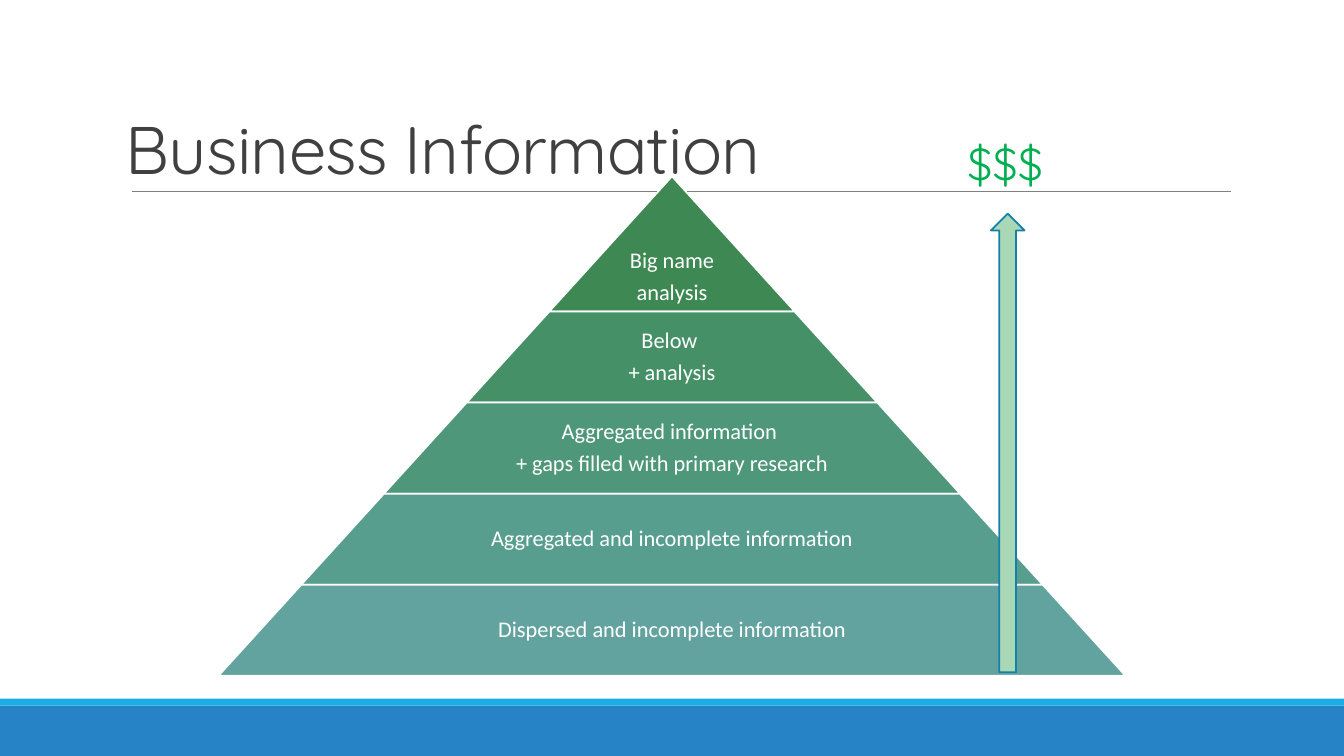
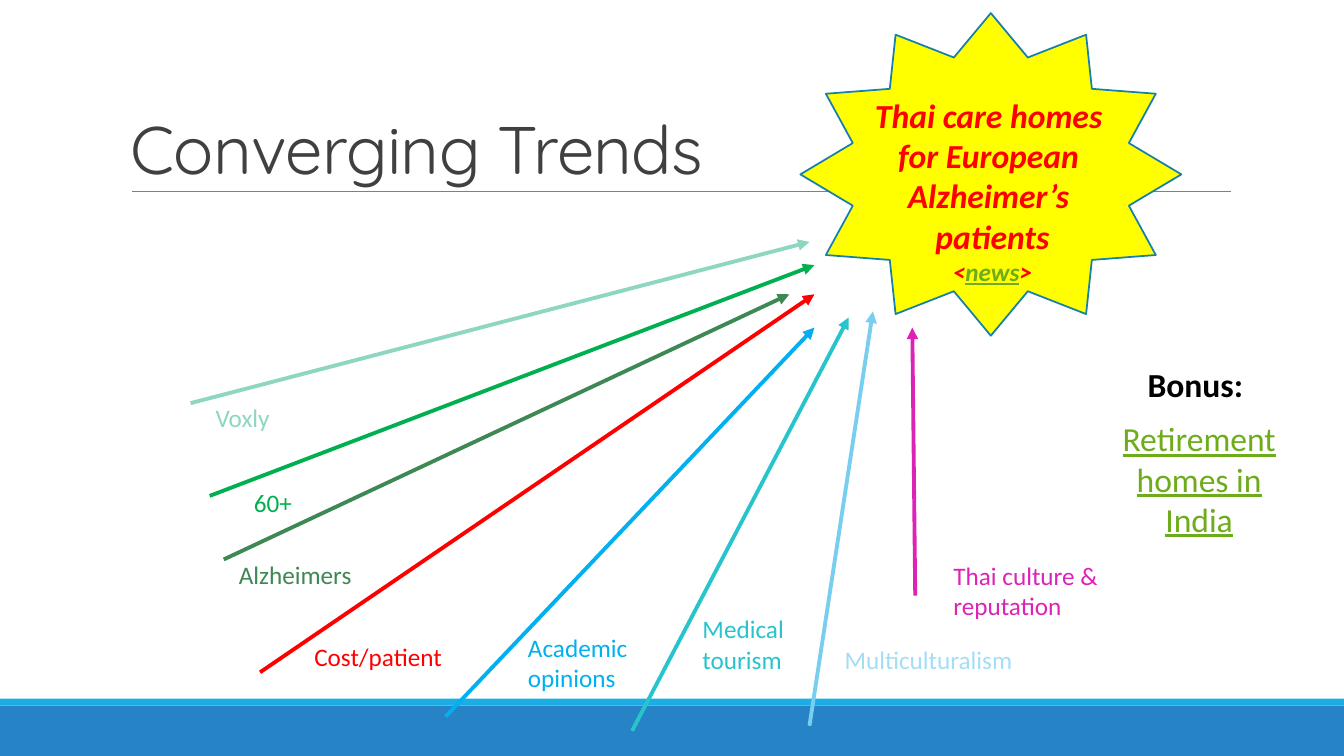
from dataclasses import dataclass, replace

from lxml import etree
from pptx import Presentation
from pptx.dml.color import RGBColor
from pptx.enum.shapes import MSO_CONNECTOR, MSO_SHAPE
from pptx.enum.text import MSO_ANCHOR, PP_ALIGN
from pptx.oxml.ns import qn
from pptx.util import Inches, Pt

RECTANGLE = MSO_SHAPE.RECTANGLE
TRAPEZOID = MSO_SHAPE.TRAPEZOID
UP_ARROW = MSO_SHAPE.UP_ARROW
STAR = MSO_SHAPE.STAR_12_POINT
STRAIGHT = MSO_CONNECTOR.STRAIGHT
TOP, MIDDLE, BOTTOM = MSO_ANCHOR.TOP, MSO_ANCHOR.MIDDLE, MSO_ANCHOR.BOTTOM
LEFT, CENTER = PP_ALIGN.LEFT, PP_ALIGN.CENTER

WIDTH, HEIGHT = Inches(13.333), Inches(7.5)
BODY_FONT, DISPLAY_FONT = "Calibri", "Quicksand"

COLORS = {
    "band": "2683C6",
    "stripe": "1CADE4",
    "rule": "808080",
    "title": "404040",
    "white": "FFFFFF",
    "black": "000000",
    "outline": "1580A9",
    "price_arrow": "A9D8B7",
    "green": "00B050",
    "forest": "3E8853",
    "red": "FF0000",
    "blue": "00B0F0",
    "teal": "28C4CC",
    "mint": "8DD6C1",
    "sky": "77CEEF",
    "pale_sky": "A4DEF4",
    "magenta": "DD23B5",
    "yellow": "FFFF00",
    "link": "6EAC1C",
    "tier_1": "3E8853",
    "tier_2": "469067",
    "tier_3": "4E977B",
    "tier_4": "579E8E",
    "tier_5": "62A39F",
}

PYRAMID_TOP, PYRAMID_BASE = 23.33, 67.5
TIP_HEIGHT, TIER_HEIGHT = 17.87, 12.05
TIERS = [
    ["Big name", "analysis"],
    ["Below ", "+ analysis"],
    ["Aggregated information ", "+ gaps filled with primary research"],
    ["Aggregated and incomplete information"],
    ["Dispersed and incomplete information"],
]

TRENDS = [
    ("Cost/patient", "red", "red", (19.35, 88.93), (60.6, 38.93), (22.65, 84.13, 13.7, 5.3)),
    ("60+", "green", "green", (15.6, 65.6), (60.6, 35.07), (18.15, 63.87, 5, 5.3)),
    ("Alzheimers", "forest", "forest", (16.65, 74), (58.73, 38.93), (17.03, 73.33, 12.5, 5.3)),
    ("Academic opinions", "blue", "blue", (33.15, 94.8), (60.6, 43.33), (38.55, 82.93, 13.7, 9.5)),
    ("Medical tourism", "teal", "teal", (47.03, 96.67), (63.15, 42), (51.53, 80.53, 9.8, 9.5)),
    ("Voxly", "mint", "mint", (14.18, 53.33), (60.23, 32), (15.3, 52.53, 8.1, 5.3)),
    ("Multiculturalism", "sky", "pale_sky", (60.23, 96), (64.95, 41.2), (62.1, 84.53, 16, 5.3)),
    ("Thai culture & reputation", "magenta", "magenta", (68.1, 78.8), (67.88, 43.33), (70.2, 73.47, 16, 9.5)),
]


@dataclass(frozen=True)
class Style:
    """Character formatting of a run."""

    size: float
    color: str
    font: str = BODY_FONT
    bold: bool = False
    italic: bool = False
    underline: bool = False
    tracking: float = 0


def across(share):
    """Turn a percentage of the slide width into a length."""
    return round(WIDTH * share / 100)


def down(share):
    """Turn a percentage of the slide height into a length."""
    return round(HEIGHT * share / 100)


def place(box):
    """Turn left, top, width and height percentages into lengths."""
    left, top, width, height = box
    return across(left), down(top), across(width), down(height)


def rgb(name):
    """Look up a colour by name."""
    return RGBColor.from_string(COLORS[name])


def add_run(paragraph, text, style):
    """Append one formatted run to a paragraph."""
    run = paragraph.add_run()
    run.text = text
    font = run.font
    font.name, font.size = style.font, Pt(style.size)
    font.bold, font.italic = style.bold, style.italic
    font.underline = style.underline
    font.color.rgb = rgb(style.color)
    if style.tracking:
        run._r.get_or_add_rPr().set("spc", str(round(style.tracking * 100)))


def add_text(slide, box, paragraphs, align=LEFT, anchor=TOP, line_spacing=1, space_after=0, insets=None):
    """Add a text box whose paragraphs are lists of (text, style) runs."""
    frame = slide.shapes.add_textbox(*place(box)).text_frame
    frame.word_wrap = True
    frame.vertical_anchor = anchor
    if insets:
        side, bottom = insets
        frame.margin_left = frame.margin_right = frame.margin_top = Inches(side)
        frame.margin_bottom = Inches(bottom)
    for index, runs in enumerate(paragraphs):
        paragraph = frame.add_paragraph() if index else frame.paragraphs[0]
        paragraph.alignment = align
        paragraph.line_spacing = line_spacing
        paragraph.space_after = Pt(space_after)
        for text, style in runs:
            add_run(paragraph, text, style)


def add_shape(slide, kind, box, fill, outline=None):
    """Add a flat preset shape with an optional outline."""
    shape = slide.shapes.add_shape(kind, *place(box))
    shape.shadow.inherit = False
    shape.fill.solid()
    shape.fill.fore_color.rgb = rgb(fill)
    if outline:
        shape.line.color.rgb = rgb(outline)
        shape.line.width = Pt(1.25)
    else:
        shape.line.fill.background()
    return shape


def add_line(slide, start, end, color, weight, arrow=False):
    """Add a straight line, with an arrowhead at its end if wanted."""
    line = slide.shapes.add_connector(
        STRAIGHT, across(start[0]), down(start[1]), across(end[0]), down(end[1])
    )
    line.line.color.rgb = rgb(color)
    line.line.width = Pt(weight)
    if arrow:
        etree.SubElement(line.line._get_or_add_ln(), qn("a:tailEnd"), type="triangle")
    etree.SubElement(line._element.spPr, qn("a:effectLst"))


def add_base_slide(presentation, title, left, width):
    """Add a blank slide with the shared bands, rule and title."""
    slide = presentation.slides.add_slide(presentation.slide_layouts[6])
    add_shape(slide, RECTANGLE, (0, 93.33, 100, 6.67), "band")
    add_shape(slide, RECTANGLE, (0, 92.4, 100, 0.93), "stripe")
    add_line(slide, (9.83, 25.33), (91.58, 25.33), "rule", 0.5)
    style = Style(48, "title", DISPLAY_FONT, tracking=-0.5)
    add_text(slide, (left, 14, width, 11.6), [[(title, style)]], anchor=BOTTOM, line_spacing=0.85)
    return slide


def add_pyramid(slide):
    """Stack the tiers, each as wide as the pyramid is at its bottom."""
    total = TIP_HEIGHT + TIER_HEIGHT * (len(TIERS) - 1)
    style = Style(16, "white")
    depth = 0
    for index, lines in enumerate(TIERS):
        is_tip = index == 0
        height = TIP_HEIGHT if is_tip else TIER_HEIGHT
        width = PYRAMID_BASE * (depth + height) / total
        box = (50 - width / 2, PYRAMID_TOP + depth, width, height)
        tier = add_shape(slide, TRAPEZOID, box, f"tier_{index + 1}", "white")
        tier.adjustments[0] = 0.909
        add_text(
            slide, box, [[(line, style)] for line in lines], CENTER,
            anchor=BOTTOM if is_tip else MIDDLE, line_spacing=0.9,
            space_after=5.6, insets=(0.02, 0.06 if is_tip else 0.02),
        )
        depth += height


def build_information_slide(presentation):
    """Build the pyramid of business information and its price arrow."""
    slide = add_base_slide(presentation, "Business Information", 8.63, 57.15)
    add_pyramid(slide)
    add_shape(slide, UP_ARROW, (73.73, 28.27, 2.5, 60.67), "price_arrow", "outline")
    add_text(slide, (71.25, 17.33, 7.5, 8.53), [[("$$$", Style(32, "green", DISPLAY_FONT))]])


def build_trends_slide(presentation):
    """Build the trend arrows that converge on the starburst."""
    slide = add_base_slide(presentation, "Converging Trends", 9, 48.15)
    for text, line_color, text_color, start, end, box in TRENDS:
        add_line(slide, start, end, line_color, 2.75, arrow=True)
        add_text(slide, box, [[(text, Style(18, text_color))]])

    add_shape(slide, STAR, (59.55, 1.73, 28.35, 42.67), "yellow", "outline")
    headline = Style(24, "red", bold=True, italic=True)
    bracket = replace(headline, size=18)
    news = replace(bracket, color="link", underline=True)
    lines = ["Thai care homes ", "for European ", "Alzheimer’s ", "patients"]
    paragraphs = [[(line, headline)] for line in lines]
    paragraphs.append([("<", bracket), ("news", news), (">", bracket)])
    add_text(slide, (62.63, 11.87, 22.43, 26.93), paragraphs, CENTER)

    bonus = [
        [("Bonus: ", Style(24, "black", bold=True))],
        [("Retirement homes in India", Style(24, "link", underline=True))],
    ]
    add_text(slide, (82.28, 47.47, 13.88, 24.67), bonus, CENTER, space_after=10)


def main():
    """Build and save the presentation."""
    presentation = Presentation()
    presentation.slide_width, presentation.slide_height = WIDTH, HEIGHT
    build_information_slide(presentation)
    build_trends_slide(presentation)
    presentation.save("out.pptx")


if __name__ == "__main__":
    main()
